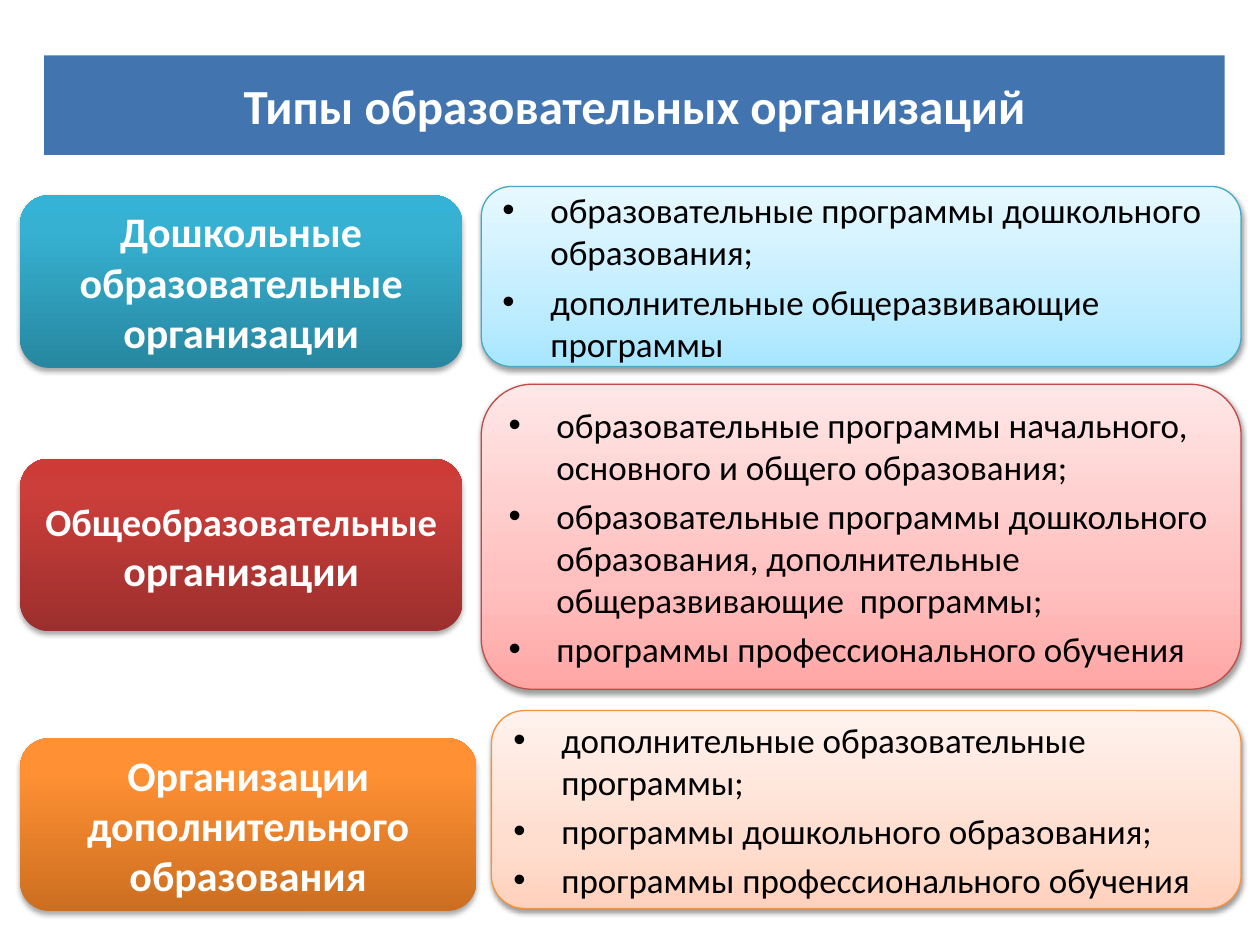
from lxml.etree import SubElement
from pptx import Presentation
from pptx.dml.color import RGBColor
from pptx.enum.shapes import MSO_SHAPE as Shape
from pptx.enum.text import MSO_ANCHOR as Anchor, PP_ALIGN as Align
from pptx.oxml.ns import qn
from pptx.util import Inches, Pt

FONT = "Calibri"
COLORS = {
    "title": "4274B0", "white": "FFFFFF", "black": "000000",
    "teal": "46AAC5", "red": "BF4C48", "orange": "F69240",
}
DARK_STOPS = {
    "teal": [(0, "2787A0"), (80, "36B1D2"), (100, "34B3D6")],
    "red": [(0, "9C2F2D"), (80, "CB3E3A"), (100, "CE3B37")],
    "orange": [(0, "CC6E20"), (80, "FF9034"), (100, "FF9136")],
}
LIGHT_STOPS = {
    "teal": [(0, "A7E6FF"), (35, "C1EDFF"), (100, "E7F8FF")],
    "red": [(0, "FFA6A5"), (35, "FFC0BF"), (100, "FFE7E7")],
    "orange": [(0, "FFD2BD"), (35, "FFDED0"), (100, "FFF2ED")],
}
TITLE = "Типы образовательных организаций"
TYPE_LEFT, TYPE_HEIGHT, PROGRAM_RIGHT = 0.16, 1.37, 9.85
ROWS = [
    {
        "color": "teal",
        "type": [("Дошкольные образовательные организации", 24)],
        "type_top": 1.55, "type_width": 3.51,
        "program_left": 3.82, "program_top": 1.48, "program_height": 1.43,
        "programs": [
            "образовательные программы дошкольного образования;",
            "дополнительные общеразвивающие программы",
        ],
    },
    {
        "color": "red",
        "type": [("Общеобразовательные", 22), (" организации", 24)],
        "type_top": 3.64, "type_width": 3.51,
        "program_left": 3.82, "program_top": 3.05, "program_height": 2.42,
        "programs": [
            "образовательные программы начального, основного и общего образования;",
            "образовательные программы дошкольного образования, "
            "дополнительные общеразвивающие  программы;",
            "программы профессионального обучения",
        ],
    },
    {
        "color": "orange",
        "type": [("Организации дополнительного образования", 24)],
        "type_top": 5.86, "type_width": 3.62,
        "program_left": 3.9, "program_top": 5.64, "program_height": 1.57,
        "programs": [
            "дополнительные образовательные программы;",
            "программы дошкольного образования;",
            "программы профессионального обучения",
        ],
    },
]


def rgb(name):
    return RGBColor.from_string(COLORS[name])


def add_box(slide, kind, left, top, width, height):
    shape = slide.shapes.add_shape(kind, *map(Inches, (left, top, width, height)))
    shape.shadow.inherit = False
    shape.line.fill.background()
    shape.text_frame.word_wrap = True
    shape.text_frame.vertical_anchor = Anchor.MIDDLE
    return shape


def style_paragraph(paragraph, color, align, bold=False):
    paragraph.alignment = align
    paragraph.font.name = FONT
    paragraph.font.bold = bold
    paragraph.font.color.rgb = rgb(color)


def add_gradient(shape, stops):
    shape.fill.gradient()
    shape.fill.gradient_angle = 90
    stop_list = shape.element.spPr.find(qn("a:gradFill")).find(qn("a:gsLst"))
    for stop in list(stop_list):
        stop_list.remove(stop)
    for position, color in stops:
        stop = SubElement(stop_list, qn("a:gs"), pos=str(position * 1000))
        SubElement(stop, qn("a:srgbClr"), val=color)


def add_shadow(shape, opacity, distance):
    effects = shape.element.spPr.find(qn("a:effectLst"))
    shadow = SubElement(
        effects, qn("a:outerShdw"), blurRad=str(Pt(3.1)), dist=str(Pt(distance)),
        dir="5400000", rotWithShape="0",
    )
    color = SubElement(shadow, qn("a:srgbClr"), val=COLORS["black"])
    SubElement(color, qn("a:alpha"), val=str(opacity * 1000))


def add_bullet(paragraph):
    properties = paragraph._p.get_or_add_pPr()
    properties.set("marL", str(Inches(0.38)))
    properties.set("indent", str(-Inches(0.38)))
    SubElement(properties, qn("a:buFont"), typeface="Arial")
    SubElement(properties, qn("a:buChar"), char="•")


def add_type(slide, row):
    shape = add_box(slide, Shape.ROUNDED_RECTANGLE, TYPE_LEFT, row["type_top"],
                    row["type_width"], TYPE_HEIGHT)
    add_gradient(shape, DARK_STOPS[row["color"]])
    add_shadow(shape, 35, 1.8)
    paragraph = shape.text_frame.paragraphs[0]
    style_paragraph(paragraph, "white", Align.CENTER, bold=True)
    paragraph.space_before = Pt(4.8)
    for text, size in row["type"]:
        run = paragraph.add_run()
        run.text = text
        run.font.size = Pt(size)


def add_programs(slide, row):
    left = row["program_left"]
    shape = add_box(slide, Shape.ROUNDED_RECTANGLE, left, row["program_top"],
                    PROGRAM_RIGHT - left, row["program_height"])
    add_gradient(shape, LIGHT_STOPS[row["color"]])
    add_shadow(shape, 38, 1.6)
    shape.line.color.rgb = rgb(row["color"])
    shape.line.width = Pt(0.75)
    frame = shape.text_frame
    for index, program in enumerate(row["programs"]):
        paragraph = frame.add_paragraph() if index else frame.paragraphs[0]
        paragraph.text = program
        paragraph.space_before = Pt(4)
        add_bullet(paragraph)
        style_paragraph(paragraph, "black", Align.LEFT)
        paragraph.font.size = Pt(20)


def main():
    presentation = Presentation()
    presentation.slide_width, presentation.slide_height = Inches(10), Inches(7.5)
    slide = presentation.slides.add_slide(presentation.slide_layouts[6])

    title = add_box(slide, Shape.RECTANGLE, 0.35, 0.44, 9.37, 0.79)
    title.fill.solid()
    title.fill.fore_color.rgb = rgb("title")
    paragraph = title.text_frame.paragraphs[0]
    paragraph.text = TITLE
    style_paragraph(paragraph, "white", Align.CENTER, bold=True)
    paragraph.font.size = Pt(28)

    for row in ROWS:
        add_type(slide, row)
        add_programs(slide, row)
    presentation.save("out.pptx")


if __name__ == "__main__":
    main()
